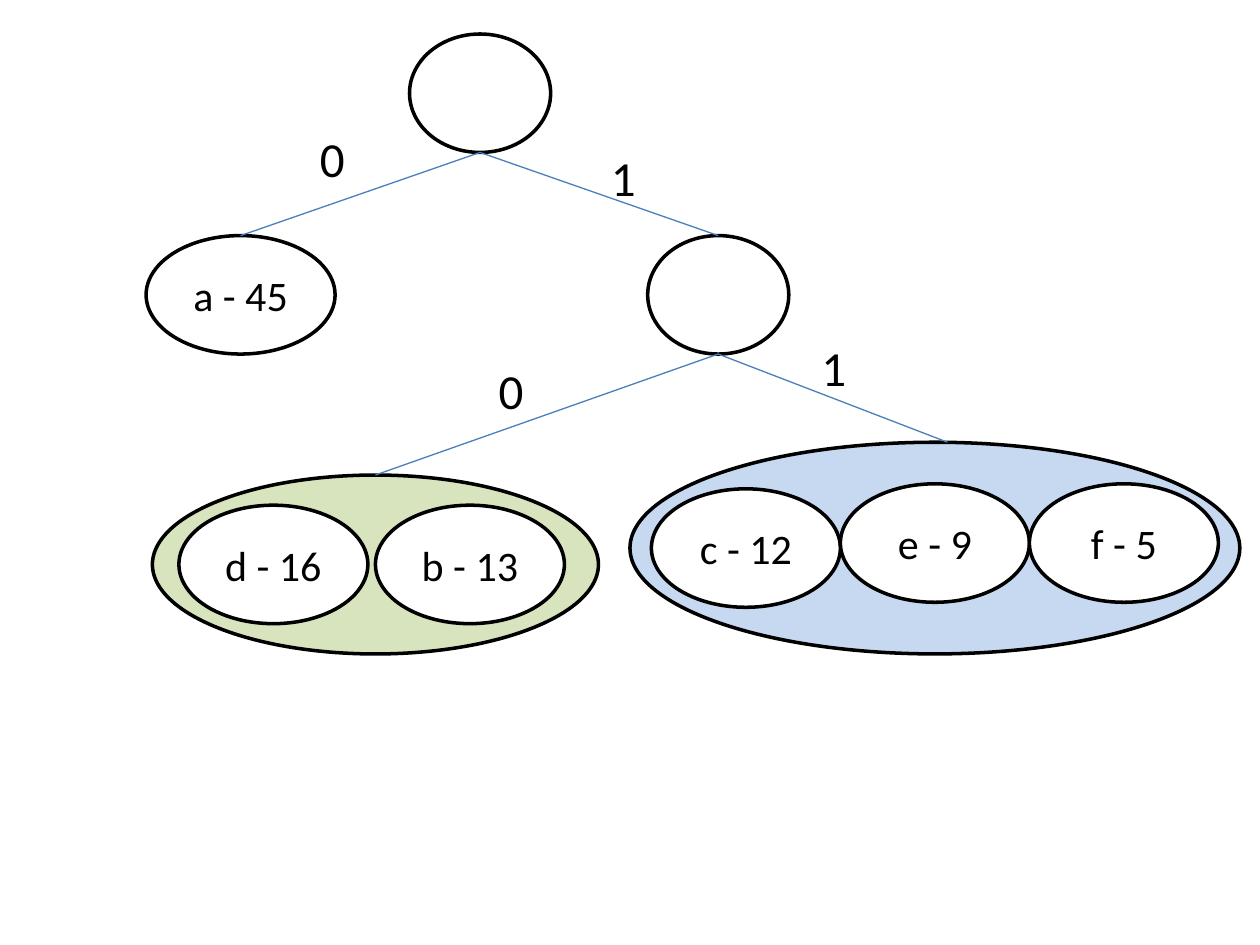
from lxml import etree
from pptx import Presentation
from pptx.dml.color import RGBColor
from pptx.enum.shapes import MSO_CONNECTOR as Connector, MSO_SHAPE as Shape
from pptx.enum.text import MSO_ANCHOR as Anchor, MSO_AUTO_SIZE as AutoSize, PP_ALIGN as Align
from pptx.oxml.ns import qn
from pptx.util import Inches, Pt

BLACK = RGBColor(0x00, 0x00, 0x00)
WHITE = RGBColor(0xFF, 0xFF, 0xFF)
GREEN = RGBColor(0xD7, 0xE4, 0xBD)
BLUE = RGBColor(0xC6, 0xD9, 0xF1)
EDGE = RGBColor(0x4B, 0x7E, 0xBC)
FONT = "Calibri"
NODE_HEIGHT = 0.94
LEAF_WIDTH = 1.5
INNER_WIDTH = 1.12


def format_text(frame, text, size):
    frame.text = text
    para = frame.paragraphs[0]
    for span in para.runs:
        span.font.name = FONT
        span.font.size = Pt(size)
        span.font.color.rgb = BLACK
    return para


def add_ellipse(shapes, left, top, width, height, fill=WHITE):
    ellipse = shapes.add_shape(
        Shape.OVAL, Inches(left), Inches(top), Inches(width), Inches(height)
    )
    ellipse.shadow.inherit = False
    ellipse.fill.solid()
    ellipse.fill.fore_color.rgb = fill
    ellipse.line.color.rgb = BLACK
    ellipse.line.width = Pt(2)
    return ellipse


def add_inner_node(shapes, left, top):
    return add_ellipse(shapes, left, top, INNER_WIDTH, NODE_HEIGHT)


def add_leaf(shapes, text, left, top):
    leaf = add_ellipse(shapes, left, top, LEAF_WIDTH, NODE_HEIGHT)
    leaf.text_frame.vertical_anchor = Anchor.MIDDLE
    format_text(leaf.text_frame, text, 24).alignment = Align.CENTER
    return leaf


def add_edge(shapes, parent, child, end_shift=0):
    edge = shapes.add_connector(
        Connector.STRAIGHT,
        parent.left + parent.width // 2,
        parent.top + parent.height,
        child.left + child.width // 2 + Inches(end_shift),
        child.top,
    )
    if not end_shift:
        edge.end_connect(child, 0)
    edge.line.color.rgb = EDGE
    edge.line.width = Pt(0.75)
    etree.SubElement(edge._element.spPr, qn("a:effectLst"))


def add_bit(shapes, text, left, top):
    box = shapes.add_textbox(Inches(left), Inches(top), Inches(0.51), Inches(0.57))
    box.text_frame.word_wrap = True
    box.text_frame.auto_size = AutoSize.SHAPE_TO_FIT_TEXT
    format_text(box.text_frame, text, 28)


def main():
    deck = Presentation()
    deck.slide_width = Inches(10)
    deck.slide_height = Inches(7.5)
    page = deck.slides.add_slide(deck.slide_layouts[6])
    shapes = page.shapes

    green_cluster = add_ellipse(shapes, 1.21, 3.77, 3.54, 1.42, GREEN)
    leaf_a = add_leaf(shapes, "а - 45", 1.16, 1.87)
    add_leaf(shapes, "b - 13", 2.98, 4.01)
    add_leaf(shapes, "d - 16", 1.42, 4.01)

    group = shapes.add_group_shape()
    blue_cluster = add_ellipse(group.shapes, 5, 3.51, 4.84, 1.68, BLUE)
    blue_leaves = [("c - 12", 3.88), ("e - 9", 3.84), ("f - 5", 3.84)]
    for index, (text, top) in enumerate(blue_leaves):
        add_leaf(group.shapes, text, 5.17 + index * LEAF_WIDTH, top)

    root = add_inner_node(shapes, 3.25, 0.27)
    branch = add_inner_node(shapes, 5.14, 1.87)
    add_edge(shapes, root, leaf_a)
    add_edge(shapes, root, branch)
    add_edge(shapes, branch, green_cluster)
    add_edge(shapes, branch, blue_cluster, 0.1)

    bits = [("0", 2.44, 0.97), ("1", 4.75, 1.12), ("0", 3.86, 2.81), ("1", 6.42, 2.63)]
    for text, left, top in bits:
        add_bit(shapes, text, left, top)

    deck.save("out.pptx")


if __name__ == "__main__":
    main()
